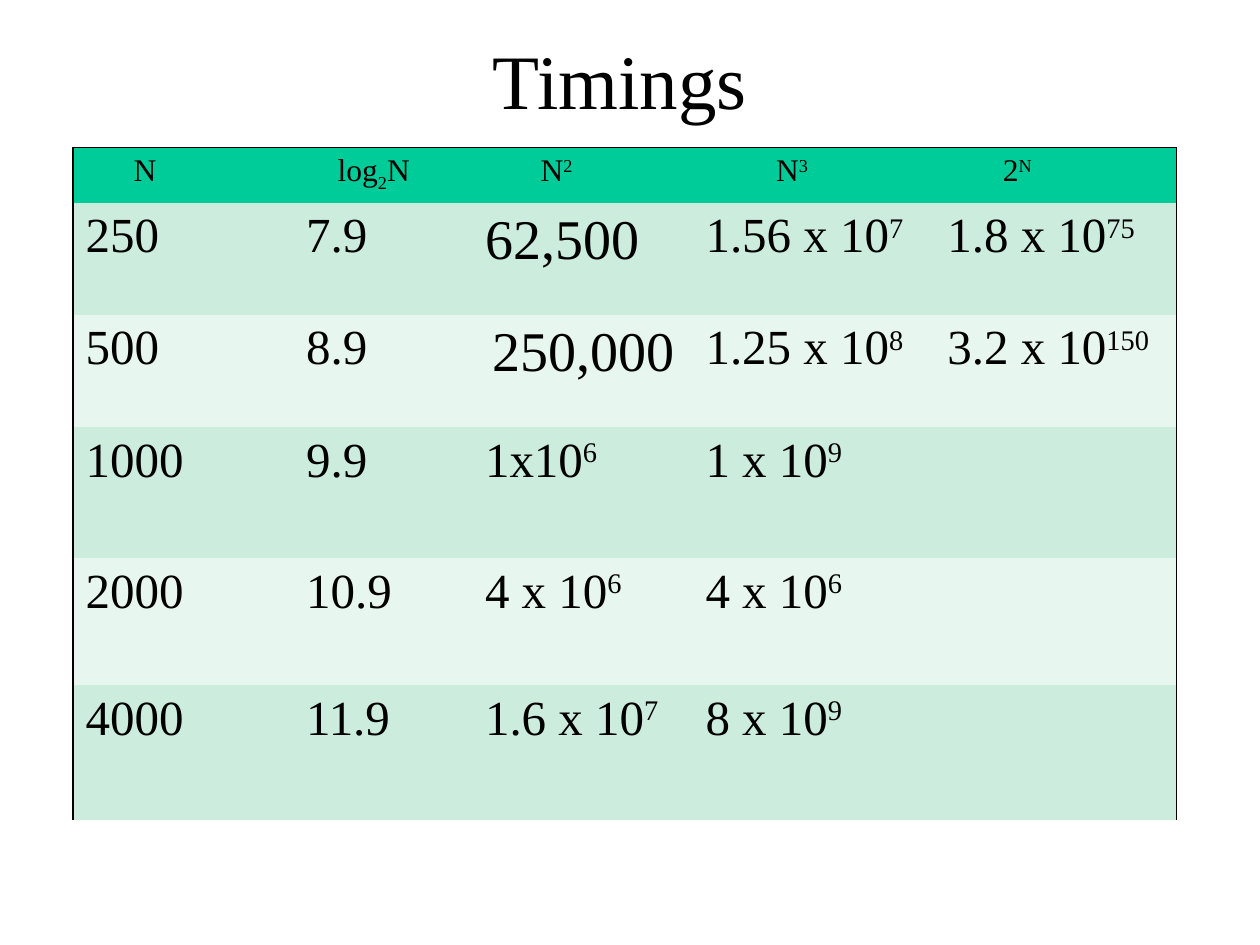
"""Build a slide with a table of timings for common growth rates."""
from dataclasses import dataclass

from lxml import etree
from pptx import Presentation
from pptx.dml.color import RGBColor
from pptx.enum.text import MSO_ANCHOR, PP_ALIGN
from pptx.oxml.ns import qn
from pptx.util import Inches, Pt

MIDDLE = MSO_ANCHOR.MIDDLE
CENTER = PP_ALIGN.CENTER
TITLE_ONLY = 5
NO_STYLE = "{2D5ABB26-0587-4C30-8999-92F81FD0307C}"
BASELINES = {"^": "30000", "_": "-25000"}


@dataclass(frozen=True)
class Theme:
    """Hold the colours, font and type sizes of the slide."""

    font: str = "Times New Roman"
    ink: str = "000000"
    header: str = "00CC99"
    bands: tuple = ("CCECDE", "E7F6EF")
    title: int = 44
    head: int = 18
    body: int = 28
    large: int = 32
    border: int = 1


THEME = Theme()
COLUMNS = (1.75, 1.42, 1.75, 1.92, 1.92)
ROWS = (0.44, 0.89, 0.89, 1.04, 1.01, 1.07)
TIMINGS = (
    ("N", "log|_2|N", "N|^2", "N|^3", "2|^N"),
    ("250", "7.9", "62,500", "1.56 x 10|^7", "1.8 x 10|^75"),
    ("500", "8.9", "250,000", "1.25 x 10|^8", "3.2 x 10|^150"),
    ("1000", "9.9", "1x10|^6", "1 x 10|^9", ""),
    ("2000", "10.9", "4 x 10|^6", "4 x 10|^6", ""),
    ("4000", "11.9", "1.6 x 10|^7", "8 x 10|^9", ""),
)
INDENTS = {(0, 0): 0.38, (0, 1): 0.25, (0, 2): 0.44, (0, 3): 0.56,
           (0, 4): 0.44, (2, 2): 0.06}
LARGE_CELLS = {(1, 2), (2, 2)}


def style_paragraph(p, size):
    """Set the font, size and colour of a paragraph."""
    p.font.name = THEME.font
    p.font.size = Pt(size)
    p.font.bold = False
    p.font.color.rgb = RGBColor.from_string(THEME.ink)


def add_runs(p, markup):
    """Add runs parted by bars, raising those after ^ and lowering those after _."""
    for part in filter(None, markup.split("|")):
        r = p.add_run()
        baseline = BASELINES.get(part[0])
        r.text = part[1:] if baseline else part
        if baseline:
            r.font._element.set("baseline", baseline)


def add_border(cell, side):
    """Draw a solid line on one side of a cell."""
    tc_pr = cell._tc.get_or_add_tcPr()
    ln = etree.SubElement(tc_pr, qn(f"a:ln{side}"), w=str(Pt(THEME.border)))
    fill = etree.SubElement(ln, qn("a:solidFill"))
    etree.SubElement(fill, qn("a:srgbClr"), val=THEME.ink)


def cell_size(row, col):
    """Return the type size for a place in the table."""
    if row == 0:
        return THEME.head
    return THEME.large if (row, col) in LARGE_CELLS else THEME.body


def fill_cell(cell, row, col, markup):
    """Write, border and colour one cell of the table."""
    p = cell.text_frame.paragraphs[0]
    style_paragraph(p, cell_size(row, col))
    add_runs(p, markup)
    if (row, col) in INDENTS:
        p._p.get_or_add_pPr().set("marL", str(Inches(INDENTS[row, col])))
    outer = {"L": col == 0, "R": col == len(COLUMNS) - 1, "T": row == 0}
    for side, drawn in outer.items():
        if drawn:
            add_border(cell, side)
    color = THEME.bands[(row - 1) % 2] if row else THEME.header
    cell.fill.solid()
    cell.fill.fore_color.rgb = RGBColor.from_string(color)


def add_title(s, text):
    """Place and format the title placeholder."""
    sp = s.shapes.title
    sp.left, sp.top = Inches(0.67), 0
    sp.width, sp.height = Inches(8.5), Inches(1.25)
    tf = sp.text_frame
    tf.text = text
    tf.vertical_anchor = MIDDLE
    p = tf.paragraphs[0]
    p.alignment = CENTER
    style_paragraph(p, THEME.title)


def add_timings(s):
    """Add the table of timings."""
    frame = s.shapes.add_table(len(ROWS), len(COLUMNS), Inches(0.58), Inches(1.17),
                               Inches(sum(COLUMNS)), Inches(sum(ROWS)))
    table = frame.table
    table.first_row = table.horz_banding = False
    table._tbl.tblPr.find(qn("a:tableStyleId")).text = NO_STYLE
    for column, width in zip(table.columns, COLUMNS):
        column.width = Inches(width)
    for row, height in zip(table.rows, ROWS):
        row.height = Inches(height)
    for i, values in enumerate(TIMINGS):
        for j, markup in enumerate(values):
            fill_cell(table.cell(i, j), i, j, markup)


def main():
    """Build and save the presentation."""
    prs = Presentation()
    prs.slide_width, prs.slide_height = Inches(10), Inches(7.5)
    s = prs.slides.add_slide(prs.slide_layouts[TITLE_ONLY])
    add_title(s, "Timings")
    add_timings(s)
    prs.save("out.pptx")


if __name__ == "__main__":
    main()
